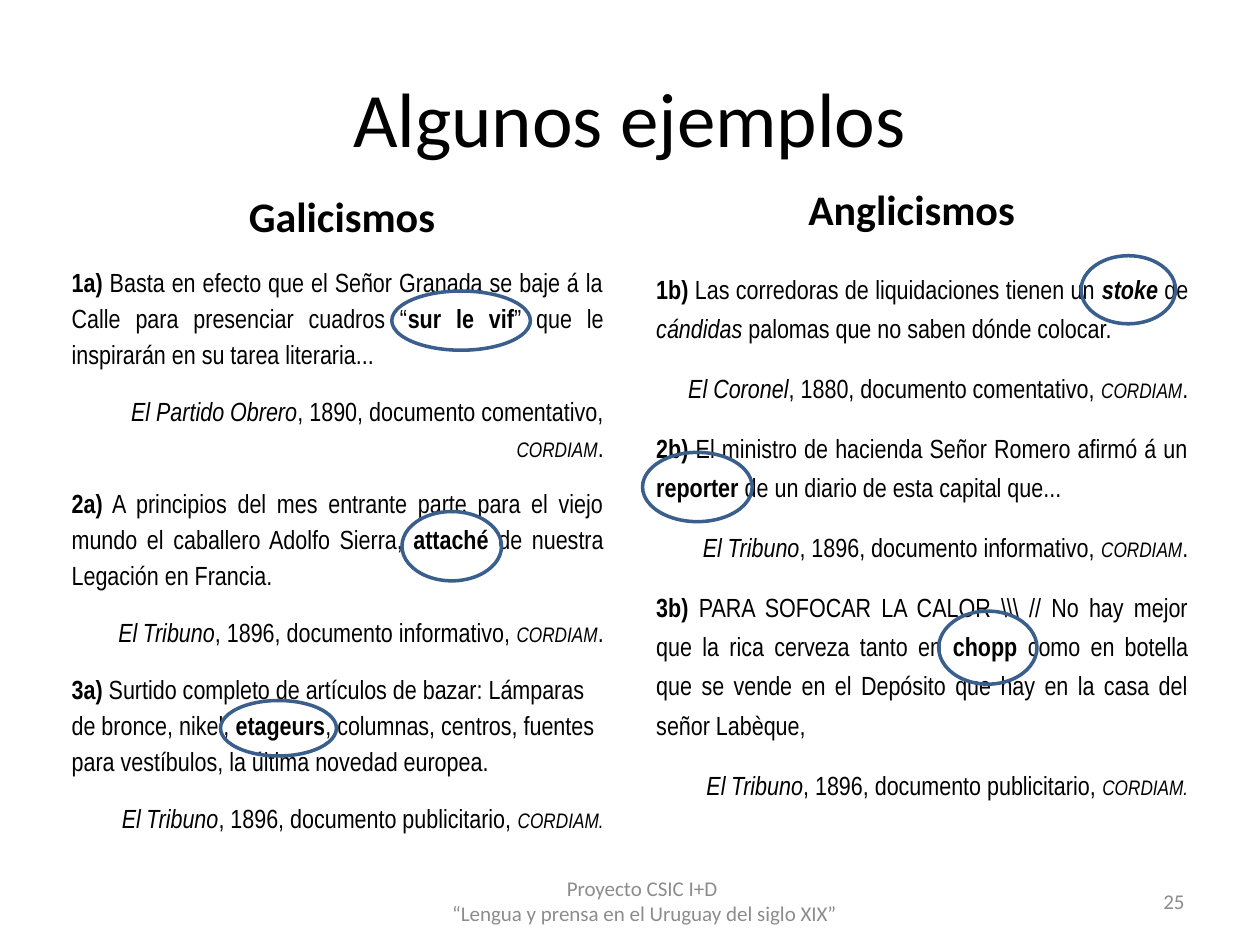
from dataclasses import dataclass

from pptx import Presentation
from pptx.dml.color import RGBColor
from pptx.enum.shapes import MSO_SHAPE
from pptx.enum.text import MSO_ANCHOR, PP_ALIGN
from pptx.util import Inches, Pt

OVAL = MSO_SHAPE.OVAL
TOP, MIDDLE = MSO_ANCHOR.TOP, MSO_ANCHOR.MIDDLE
LEFT, CENTER = PP_ALIGN.LEFT, PP_ALIGN.CENTER
RIGHT, JUSTIFY = PP_ALIGN.RIGHT, PP_ALIGN.JUSTIFY

# The slide is a grid of 100 columns by 75 rows of square cells.
WIDTH, HEIGHT = Inches(10), Inches(7.5)
COLUMNS, ROWS = 100, 75


@dataclass(frozen=True)
class Theme:
    head_font: str = "Calibri"
    body_font: str = "Arial Narrow"
    ink: RGBColor = RGBColor(0x00, 0x00, 0x00)
    muted: RGBColor = RGBColor(0x8C, 0x8C, 0x8C)
    ring: RGBColor = RGBColor(0x3A, 0x5F, 0x8C)
    title: int = 44
    heading: int = 24
    body: int = 15
    footer: int = 12
    gap: int = 6
    ring_width: int = 2


THEME = Theme()


def cells(left, top, width, height):
    """Turn grid columns and rows into slide lengths."""
    col, row = WIDTH / COLUMNS, HEIGHT / ROWS
    return int(left * col), int(top * row), int(width * col), int(height * row)


def add_frame(slide, box, anchor):
    tf = slide.shapes.add_textbox(*cells(*box)).text_frame
    tf.word_wrap = True
    tf.vertical_anchor = anchor
    return tf


def add_run(p, text, font, size, color, style=""):
    """Style letters: b bold, i italic, s small capitals."""
    r = p.add_run()
    r.text = text
    r.font.name = font
    r.font.size = Pt(size)
    r.font.color.rgb = color
    r.font.bold = "b" in style
    r.font.italic = "i" in style
    if "s" in style:
        r.font._element.set("cap", "small")


def add_label(slide, box, lines, size, color=THEME.ink, align=CENTER, style=""):
    p = add_frame(slide, box, MIDDLE).paragraphs[0]
    p.alignment = align
    for i, line in enumerate(lines):
        if i:
            p.add_line_break()
        add_run(p, line, THEME.head_font, size, color, style)


def source(journal, year, kind, end=((".", ""),)):
    """Right-aligned reference that follows an example."""
    return RIGHT, [(journal, "i"), (f", {year}, documento {kind}, ", ""),
                   ("cordiam", "is"), *end]


def add_examples(slide, box, paragraphs, spacing):
    tf = add_frame(slide, box, TOP)
    for i, (align, runs) in enumerate(paragraphs):
        p = tf.add_paragraph() if i else tf.paragraphs[0]
        p.alignment = align
        p.line_spacing = spacing
        p.space_before = p.space_after = Pt(THEME.gap)
        for text, style in runs:
            add_run(p, text, THEME.body_font, THEME.body, THEME.ink, style)


def add_ring(slide, box):
    sp = slide.shapes.add_shape(OVAL, *cells(*box))
    sp.shadow.inherit = False
    sp.fill.background()
    sp.line.color.rgb = THEME.ring
    sp.line.width = Pt(THEME.ring_width)


SMALL_DOT = ((".", "is"),)

GALLICISMS = [
    (JUSTIFY, [
        ("1a)", "b"),
        (" Basta en efecto que el Señor Granada se baje á la Calle "
         "para presenciar cuadros “", ""),
        ("sur le vif", "b"),
        ("” que le inspirarán en su tarea literaria...", "")]),
    source("El Partido Obrero", 1890, "comentativo"),
    (JUSTIFY, [
        ("2a)", "b"),
        (" A principios del mes entrante parte para el viejo mundo "
         "el caballero Adolfo Sierra, ", ""),
        ("attaché", "b"),
        (" de nuestra Legación en Francia.", "")]),
    source("El Tribuno", 1896, "informativo"),
    (LEFT, [
        ("3a)", "b"),
        (" Surtido completo de artículos de bazar: Lámparas de bronce, "
         "nikel, ", ""),
        ("etageurs", "b"),
        (", columnas, centros, fuentes para vestíbulos, la última novedad "
         "europea.", "")]),
    source("El Tribuno", 1896, "publicitario", SMALL_DOT),
]

ANGLICISMS = [
    (JUSTIFY, [
        ("1b)", "b"),
        (" Las corredoras de liquidaciones tienen un ", ""),
        ("stoke", "bi"),
        (" de ", ""),
        ("cándidas", "i"),
        (" palomas que no saben dónde colocar.", "")]),
    source("El Coronel", 1880, "comentativo"),
    (JUSTIFY, [
        ("2b)", "b"),
        (" El ministro de hacienda Señor Romero afirmó á un ", ""),
        ("reporter", "b"),
        (" de un diario de esta capital que...", "")]),
    source("El Tribuno", 1896, "informativo"),
    (JUSTIFY, [
        ("3b)", "b"),
        (" PARA SOFOCAR LA CALOR \\\\\\ // No hay mejor que la rica cerveza "
         "tanto en ", ""),
        ("chopp", "b"),
        (" como en botella que se vende en el Depósito que hay en la casa "
         "del señor Labèque,", "")]),
    source("El Tribuno", 1896, "publicitario", SMALL_DOT),
]

LOANWORD_RINGS = [
    (31.1, 23.1, 11, 4.7),     # sur le vif
    (31.9, 40.6, 7.9, 5.5),    # attaché
    (17.5, 55.6, 9.2, 4.4),    # etageurs
    (85.8, 20.3, 7.5, 5.4),    # stoke
    (51, 35.9, 8.7, 5.5),      # reporter
    (74.5, 48.5, 7.8, 5.8),    # chopp
]

FOOTER = ["Proyecto CSIC I+D ", "“Lengua y prensa en el Uruguay del siglo XIX”"]


def main():
    prs = Presentation()
    prs.slide_width, prs.slide_height = WIDTH, HEIGHT
    slide = prs.slides.add_slide(prs.slide_layouts[6])

    add_label(slide, (5, 3, 90, 12.5), ["Algunos ejemplos"], THEME.title)
    add_label(slide, (5.1, 13.6, 44.1, 7), ["Galicismos"], THEME.heading, style="b")
    add_examples(slide, (4.7, 20.3, 44.2, 41.7), GALLICISMS, 1.14)
    add_label(slide, (50.3, 13.1, 44.1, 7), ["Anglicismos"], THEME.heading, style="b")
    add_examples(slide, (51.1, 20.6, 44.2, 47.2), ANGLICISMS, 1.24)
    add_label(slide, (71.7, 69.5, 23.3, 4), ["25"], THEME.footer, THEME.muted, RIGHT)
    for box in LOANWORD_RINGS:
        add_ring(slide, box)
    add_label(slide, (34.2, 69.5, 33.9, 4), FOOTER, THEME.footer, THEME.muted)

    prs.save("out.pptx")


if __name__ == "__main__":
    main()
